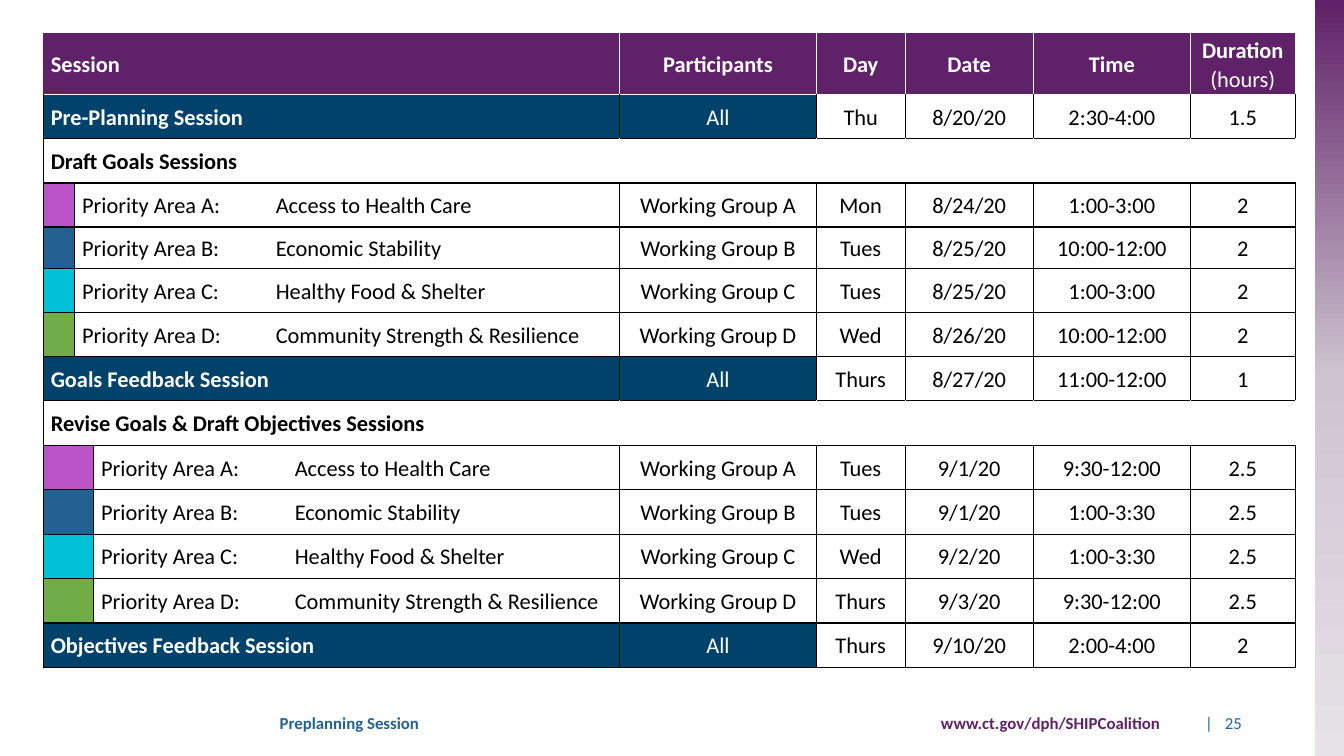
from copy import deepcopy
from dataclasses import dataclass

from lxml import etree
from pptx import Presentation
from pptx import util as u
from pptx.dml.color import RGBColor
from pptx.enum import shapes, text
from pptx.oxml.ns import qn


@dataclass(frozen=True)
class Theme:
    font: str = "Calibri"
    table_size: int = 16
    footer_size: int = 12
    purple: str = "5F2167"
    navy: str = "01426A"
    blue: str = "236192"
    black: str = "000000"
    white: str = "FFFFFF"
    area_colors: tuple = ("BA54C8", "236192", "00C1D5", "70AD47")
    bar_colors: tuple = ("5F2167", "CEC4D0", "E7E2E8")


theme = Theme()


def style_text(frame, size, color, bold=False, align=text.PP_ALIGN.LEFT, tab=None):
    frame.word_wrap = True
    for para in frame.paragraphs:
        para.alignment = align
        if tab:
            tabs = etree.SubElement(para._p.get_or_add_pPr(), qn("a:tabLst"))
            etree.SubElement(tabs, qn("a:tab"), pos=str(tab), algn="l")
        for span in para.runs:
            span.font.name = theme.font
            span.font.size = u.Pt(size)
            span.font.bold = bold
            span.font.color.rgb = RGBColor.from_string(color)


def set_borders(cell, colors):
    properties = cell._tc.get_or_add_tcPr()
    for index, (side, color) in enumerate(zip(("lnL", "lnR", "lnT", "lnB"), colors)):
        line = etree.Element(qn("a:" + side), w=str(u.Pt(1)))
        fill = etree.SubElement(line, qn("a:solidFill"))
        etree.SubElement(fill, qn("a:srgbClr"), val=color)
        properties.insert(index, line)


areas = ["Access to Health Care", "Economic Stability",
         "Healthy Food & Shelter", "Community Strength & Resilience"]
draft_slots = [("Mon", "8/24/20", "1:00-3:00", "2"),
               ("Tues", "8/25/20", "10:00-12:00", "2"),
               ("Tues", "8/25/20", "1:00-3:00", "2"),
               ("Wed", "8/26/20", "10:00-12:00", "2")]
revise_slots = [("Tues", "9/1/20", "9:30-12:00", "2.5"),
                ("Tues", "9/1/20", "1:00-3:30", "2.5"),
                ("Wed", "9/2/20", "1:00-3:30", "2.5"),
                ("Thurs", "9/3/20", "9:30-12:00", "2.5")]

schedule = [
    ("header", "Session", "Participants", "Day", "Date", "Time", "Duration\n(hours)"),
    ("joint", "Pre-Planning Session", "All", "Thu", "8/20/20", "2:30-4:00", "1.5"),
]
stages = [
    ("Draft Goals Sessions", draft_slots,
     ("joint", "Goals Feedback Session", "All", "Thurs", "8/27/20", "11:00-12:00", "1")),
    ("Revise Goals & Draft Objectives Sessions", revise_slots,
     ("joint", "Objectives Feedback Session", "All", "Thurs", "9/10/20", "2:00-4:00", "2")),
]
for heading, slots, feedback in stages:
    schedule.append(("section", heading))
    for letter, area, slot in zip("ABCD", areas, slots):
        label = f"Priority Area {letter}:\t{area}"
        schedule.append(("area", label, f"Working Group {letter}", *slot))
    schedule.append(feedback)

deck = Presentation()
deck.slide_width, deck.slide_height = u.Cm(33.87), u.Cm(19.05)
page = deck.slides.add_slide(deck.slide_layouts[6])

bar_width = u.Cm(0.74)
bar = page.shapes.add_shape(shapes.MSO_SHAPE.RECTANGLE, deck.slide_width - bar_width, 0,
                            bar_width, deck.slide_height)
bar.shadow.inherit = False
bar.line.fill.background()
bar.fill.gradient()
bar.fill.gradient_angle = 270
stop_list = bar._element.spPr.find(".//" + qn("a:gsLst"))
stop_list.append(deepcopy(stop_list[-1]))
for stop, position, color in zip(bar.fill.gradient_stops, (0, 0.5, 1), theme.bar_colors):
    stop.position = position
    stop.color.rgb = RGBColor.from_string(color)

column_widths = [0.79, 0.28, 13.26, 4.95, 2.24, 3.23, 3.96, 2.64]
row_heights = [1.55] + [1.11] * 3 + [1.05] + [1.11] * 3 + [1.12] * 6
table = page.shapes.add_table(len(schedule), len(column_widths), u.Cm(1.09), u.Cm(0.84),
                              u.Cm(sum(column_widths)), u.Cm(sum(row_heights))).table
table.first_row = table.horz_banding = False
for column, width in zip(table.columns, column_widths):
    column.width = u.Cm(width)
for row, height in zip(table.rows, row_heights):
    row.height = u.Cm(height)

area_count = 0
for row_index, (kind, *entries) in enumerate(schedule):
    fills = {}
    label_column = 0
    if kind == "header":
        fills = dict.fromkeys(range(8), theme.purple)
    elif kind == "joint":
        fills = dict.fromkeys(range(4), theme.navy)
    elif kind == "area":
        fills = {0: theme.area_colors[area_count % 4]}
        label_column = 1 if area_count < 4 else 2
        area_count += 1

    if label_column == 2:
        table.cell(row_index, 0).merge(table.cell(row_index, 1))
    else:
        table.cell(row_index, label_column).merge(table.cell(row_index, 2))

    for column_index in range(8):
        cell = table.cell(row_index, column_index)
        cell.margin_left = cell.margin_right = u.Cm(0.19)
        if column_index in fills:
            cell.fill.solid()
            cell.fill.fore_color.rgb = RGBColor.from_string(fills[column_index])
        else:
            cell.fill.background()
        left = right = top = bottom = theme.black
        if kind == "header":
            left = theme.white if column_index else theme.purple
            top, right, bottom = theme.purple, theme.white, theme.white
        elif kind == "section":
            left = theme.white if column_index else theme.black
            right = theme.white
        elif row_index == 1:
            top = theme.white
        set_borders(cell, (left, right, top, bottom))

    for column_index, entry in zip((label_column, 3, 4, 5, 6, 7), entries):
        cell = table.cell(row_index, column_index)
        cell.margin_top = cell.margin_bottom = 0
        cell.vertical_anchor = text.MSO_ANCHOR.MIDDLE
        cell.text_frame.text = entry
        is_label = column_index == label_column
        for para in cell.text_frame.paragraphs:
            para.line_spacing = 1.07
        style_text(cell.text_frame, theme.table_size,
                   theme.white if column_index in fills else theme.black,
                   bold=kind == "header" or (is_label and kind != "area"),
                   align=text.PP_ALIGN.LEFT if is_label else text.PP_ALIGN.CENTER,
                   tab=u.Cm(4.88) if is_label and kind == "area" else None)

table.cell(0, 7).text_frame.paragraphs[1].runs[0].font.bold = False

footers = [
    ("www.ct.gov/dph/SHIPCoalition", 22.48, 7.01, 0.25, theme.purple, True,
     text.PP_ALIGN.RIGHT, None),
    ("Preplanning Session", 6.8, 15.42, 0.25, theme.blue, True, text.PP_ALIGN.LEFT, None),
    ("|\t25", 29.77, 1.8, 0.6, theme.blue, False, text.PP_ALIGN.LEFT, u.Cm(0.5)),
]
for words, left, width, inset, color, bold, align, tab in footers:
    box = page.shapes.add_textbox(u.Cm(left), u.Cm(17.7), u.Cm(width), u.Cm(1.04))
    box.text_frame.text = words
    box.text_frame.margin_left = u.Cm(inset)
    box.text_frame.vertical_anchor = text.MSO_ANCHOR.MIDDLE
    style_text(box.text_frame, theme.footer_size, color, bold, align, tab)

deck.save("out.pptx")
